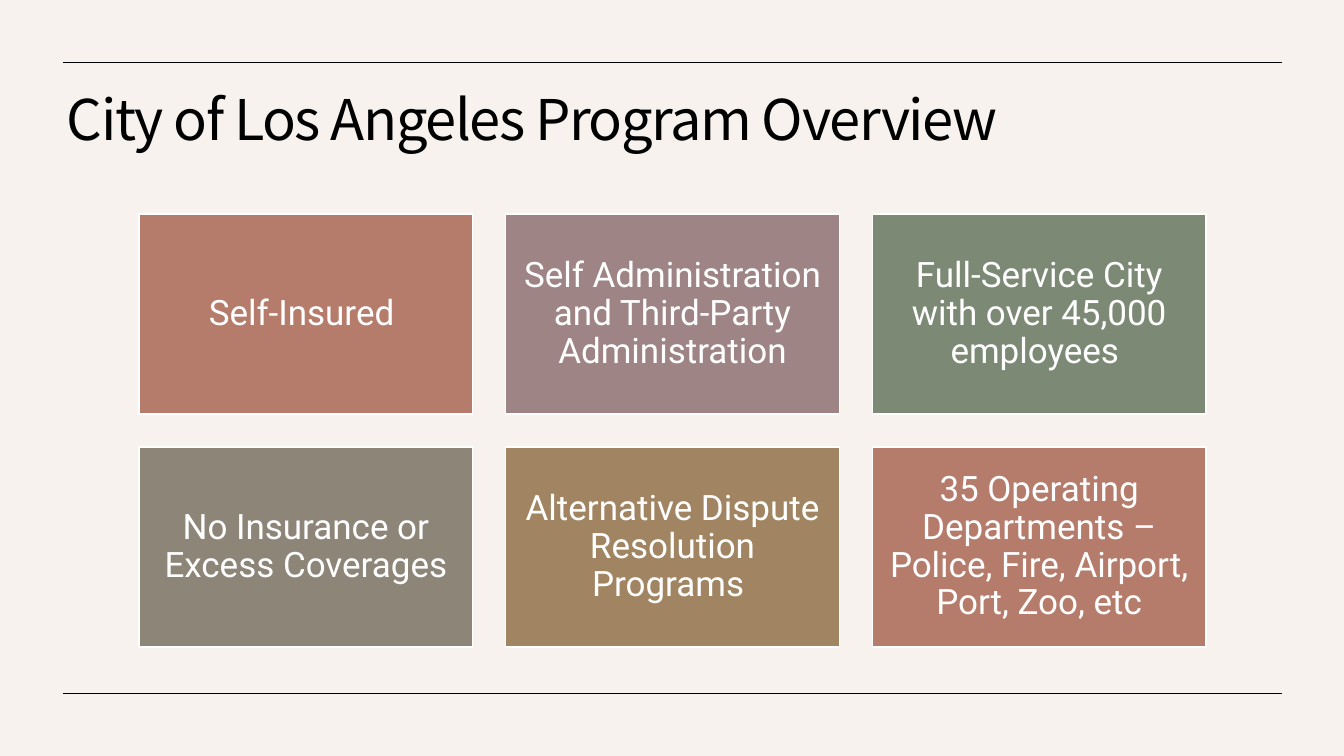
from pptx import Presentation
from pptx import util as u
from pptx.dml.color import RGBColor
from pptx.enum import shapes, text
from pptx.oxml.ns import qn
from lxml import etree

PX_PER_INCH = 100.8
COLORS = {
    "background": "F7F2EE", "ink": "000000", "white": "FFFFFF",
    "terracotta": "B57B6B", "mauve": "9E8484", "sage": "7C8A75",
    "stone": "8C8578", "ochre": "A18563",
}
# Centred lines keep their trailing space, which shifts them slightly left
TOPICS = [
    ("Self-Insured ", "terracotta"),
    ("Self Administration and Third-Party Administration", "mauve"),
    ("Full-Service City with over 45,000 employees ", "sage"),
    ("No Insurance or Excess Coverages", "stone"),
    ("Alternative Dispute Resolution Programs ", "ochre"),
    ("35 Operating Departments – Police, Fire, Airport, Port, Zoo, etc", "terracotta"),
]


def px(length):
    return u.Emu(round(length * 914400 / PX_PER_INCH))


def color(name):
    return RGBColor.from_string(COLORS[name])


def write(frame, words, font, size, color_name):
    frame.word_wrap = True
    frame.text = words
    paragraph = frame.paragraphs[0]
    paragraph.line_spacing = 0.9
    run = paragraph.runs[0]
    run.font.name = font
    run.font.size = u.Pt(size)
    run.font.color.rgb = color(color_name)
    return paragraph


def add_title(slide, left, top, width, height):
    title = slide.shapes.add_textbox(px(left), px(top), px(width), px(height))
    heading = write(title.text_frame, "City of Los Angeles Program Overview",
                    "Noto Sans CJK KR", 40, "ink")
    # Tighten letter spacing by one point
    heading.runs[0].font._element.set("spc", "-100")


def add_rules(slide, left, top, width, height):
    for y in (top, top + height):
        rule = slide.shapes.add_connector(
            shapes.MSO_CONNECTOR.STRAIGHT, px(left + width), px(y), px(left), px(y))
        rule.line.color.rgb = color("ink")
        rule.line.width = u.Pt(0.5)
        etree.SubElement(rule._element.spPr, qn("a:effectLst"))


def add_topic_grid(slide, left, top, width, height, columns=3, gap=33):
    rows = len(TOPICS) // columns
    card_width = (width - gap * (columns - 1)) / columns
    card_height = (height - gap * (rows - 1)) / rows
    for index, (words, fill) in enumerate(TOPICS):
        row, column = divmod(index, columns)
        card = slide.shapes.add_shape(
            shapes.MSO_SHAPE.RECTANGLE,
            px(left + column * (card_width + gap)),
            px(top + row * (card_height + gap)),
            px(card_width), px(card_height))
        card.shadow.inherit = False
        card.fill.solid()
        card.fill.fore_color.rgb = color(fill)
        card.line.color.rgb = color("white")
        card.line.width = u.Pt(1)
        frame = card.text_frame
        frame.margin_left = frame.margin_right = px(10)
        frame.margin_top = frame.margin_bottom = px(10)
        frame.vertical_anchor = text.MSO_ANCHOR.MIDDLE
        topic = write(frame, words, "Roboto", 25, "white")
        topic.alignment = text.PP_ALIGN.CENTER


def build_overview(deck):
    slide = deck.slides.add_slide(deck.slide_layouts[6])
    slide.background.fill.solid()
    slide.background.fill.fore_color.rgb = color("background")
    add_title(slide, 57, 87, 1225, 116)
    add_rules(slide, 63, 62, 1219, 631)
    add_topic_grid(slide, 139, 214, 1067, 433)


def main():
    deck = Presentation()
    deck.slide_width, deck.slide_height = px(1344), px(756)
    build_overview(deck)
    deck.save("out.pptx")


if __name__ == "__main__":
    main()
